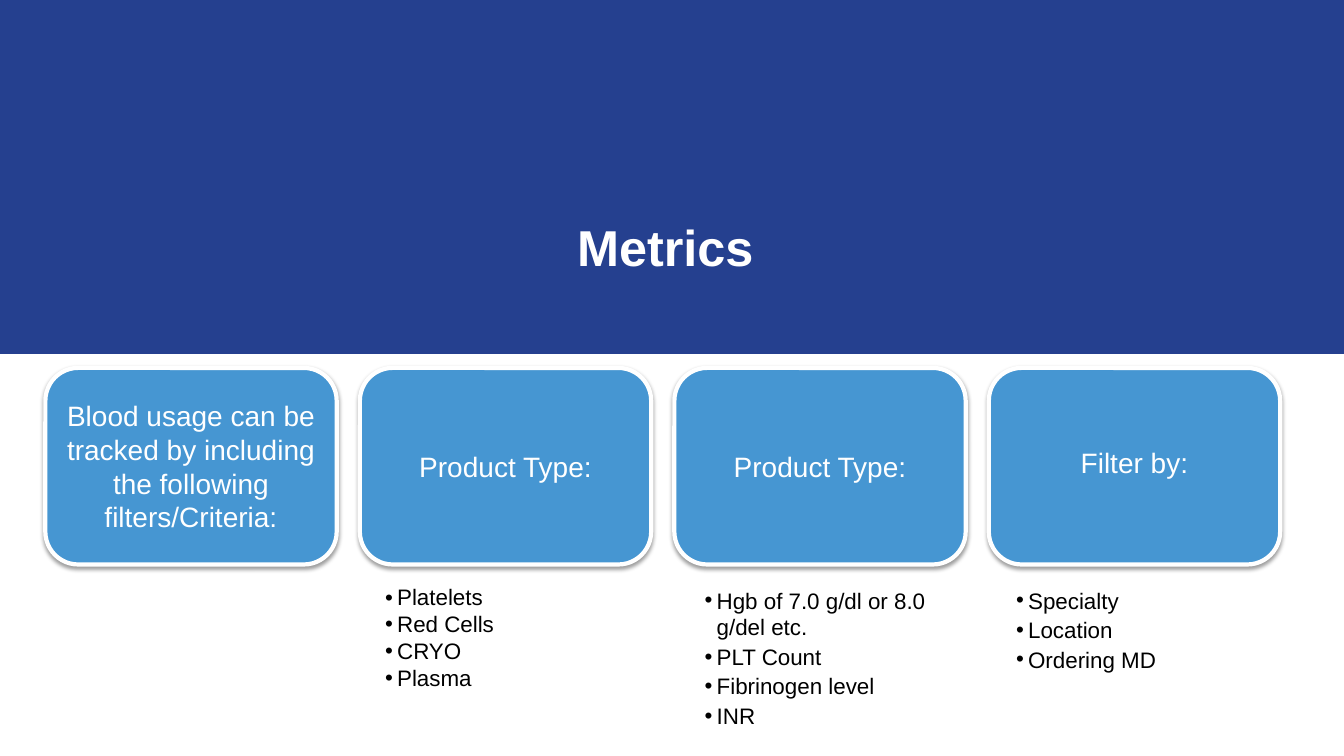
import pptx
import pptx.util
import pptx.dml.color
import pptx.enum.shapes
import pptx.enum.text
import pptx.oxml.ns
import lxml.etree

Pt = pptx.util.Pt
RGB = pptx.dml.color.RGBColor.from_string
qn = pptx.oxml.ns.qn
ALIGN = pptx.enum.text.PP_ALIGN
ANCHOR = pptx.enum.text.MSO_ANCHOR

METRICS = "Metrics "
CARDS = [
    {"heading": "Blood usage can be tracked by including the following filters/Criteria:", "bottom": 6.5},
    {"heading": "Product Type:", "bottom": 6.5},
    {"heading": "Product Type:", "bottom": 6.5},
    {"heading": "Filter by:", "bottom": 12.3},
]
LISTS = [
    {"slot": 1, "left": 267.84, "height": 100, "spacing": 0.9,
     "items": ["Platelets", "Red Cells", "CRYO", "Plasma"]},
    {"slot": 2, "left": 496.08, "height": 127.4, "spacing": 1.0,
     "items": ["Hgb of 7.0 g/dl or 8.0 g/del etc.", "PLT Count", "Fibrinogen level", "INR"]},
    {"slot": 3, "left": 718.56, "height": 69, "spacing": 1.0,
     "items": ["Specialty", "Location", "Ordering MD"]},
]
THEME = {
    "band": "25408F", "card": "4696D2", "light": "FFFFFF", "dark": "000000",
    "font": "Arial", "title": 36, "heading": 20, "item": 16,
}
SLIDE_W, SLIDE_H = 960, 540
BAND_H = 252.72
CARD_LEFT, CARD_TOP, CARD_W, CARD_H, CARD_PITCH = 32.4, 262.8, 208.08, 140.4, 224.64
LIST_TOP, LIST_W, INDENT, ITEM_GAP = 415.44, 185.76, 8.64, 1.9


def apply(target, formats):
    for attribute, value in formats.items():
        setattr(target, attribute, value)


def place(part, left, top, width, height):
    apply(part, {"left": Pt(left), "top": Pt(top), "width": Pt(width), "height": Pt(height)})


def write(paragraph, words, size, colour, bold=False):
    run = paragraph.add_run()
    run.text = words
    apply(run.font, {"name": THEME["font"], "size": Pt(THEME[size]), "bold": bold})
    run.font.color.rgb = RGB(THEME[colour])


def frame(part, anchor, left=7.2, top=3.6, right=7.2, bottom=3.6):
    apply(part.text_frame, {
        "word_wrap": True, "auto_size": pptx.enum.text.MSO_AUTO_SIZE.NONE,
        "vertical_anchor": anchor, "margin_left": Pt(left), "margin_top": Pt(top),
        "margin_right": Pt(right), "margin_bottom": Pt(bottom)})


def add_bullet(paragraph):
    properties = paragraph._p.get_or_add_pPr()
    properties.set("marL", str(Pt(INDENT)))
    properties.set("indent", str(-Pt(INDENT)))
    bullet_colour = lxml.etree.SubElement(properties, qn("a:buClr"))
    lxml.etree.SubElement(bullet_colour, qn("a:srgbClr"), val=THEME["dark"])
    lxml.etree.SubElement(properties, qn("a:buFont"), typeface=THEME["font"])
    lxml.etree.SubElement(properties, qn("a:buChar"), char="•")


def add_shadow(card):
    effects = card._element.spPr.find(qn("a:effectLst"))
    shadow = lxml.etree.SubElement(
        effects, qn("a:outerShdw"), blurRad=str(Pt(3.1)), dist=str(Pt(1.6)),
        dir="5400000", rotWithShape="0")
    shade = lxml.etree.SubElement(shadow, qn("a:srgbClr"), val=THEME["dark"])
    lxml.etree.SubElement(shade, qn("a:alpha"), val="38000")


def add_panel(slide, kind, fill, left, top, width, height):
    panel = slide.shapes.add_shape(kind, Pt(left), Pt(top), Pt(width), Pt(height))
    panel.fill.solid()
    panel.fill.fore_color.rgb = RGB(THEME[fill])
    panel.line.fill.background()
    panel.shadow.inherit = False
    return panel


def add_title(slide):
    title = slide.shapes.title
    place(title, 66.24, 126.72, 828, 104.4)
    frame(title, ANCHOR.MIDDLE)
    paragraph = title.text_frame.paragraphs[0]
    apply(paragraph, {"alignment": ALIGN.CENTER, "line_spacing": 0.9})
    write(paragraph, METRICS, "title", "light", True)


def add_card(slide, column, content):
    card = add_panel(slide, pptx.enum.shapes.MSO_SHAPE.ROUNDED_RECTANGLE, "card",
                     CARD_LEFT + column * CARD_PITCH, CARD_TOP, CARD_W, CARD_H)
    card.line.color.rgb = RGB(THEME["light"])
    card.line.width = Pt(3)
    add_shadow(card)
    frame(card, ANCHOR.MIDDLE, 6.5, 6.5, 6.5, content["bottom"])
    paragraph = card.text_frame.paragraphs[0]
    paragraph.alignment = ALIGN.CENTER
    write(paragraph, content["heading"], "heading", "light")


def add_list(slide, content):
    body = slide.placeholders[content["slot"]]
    place(body, content["left"], LIST_TOP, LIST_W, content["height"])
    frame(body, ANCHOR.TOP)
    for position, item in enumerate(content["items"]):
        paragraph = body.text_frame.add_paragraph() if position else body.text_frame.paragraphs[0]
        apply(paragraph, {
            "level": 1, "alignment": ALIGN.LEFT, "line_spacing": content["spacing"],
            "space_before": Pt(ITEM_GAP if position else 0), "space_after": Pt(0)})
        add_bullet(paragraph)
        write(paragraph, item, "item", "dark")


def main():
    deck = pptx.Presentation()
    apply(deck, {"slide_width": Pt(SLIDE_W), "slide_height": Pt(SLIDE_H)})
    slide = deck.slides.add_slide(deck.slide_layouts.get_by_name("Comparison"))
    band = add_panel(slide, pptx.enum.shapes.MSO_SHAPE.RECTANGLE, "band", 0, 0, SLIDE_W, BAND_H)
    slide.shapes._spTree.insert(2, band._element)
    add_title(slide)
    for column, content in enumerate(CARDS):
        add_card(slide, column, content)
    for content in LISTS:
        add_list(slide, content)
    used = {content["slot"] for content in LISTS} | {0}
    for spare in list(slide.placeholders):
        if spare.placeholder_format.idx not in used:
            slide.shapes._spTree.remove(spare._element)
    deck.save("out.pptx")


if __name__ == "__main__":
    main()
